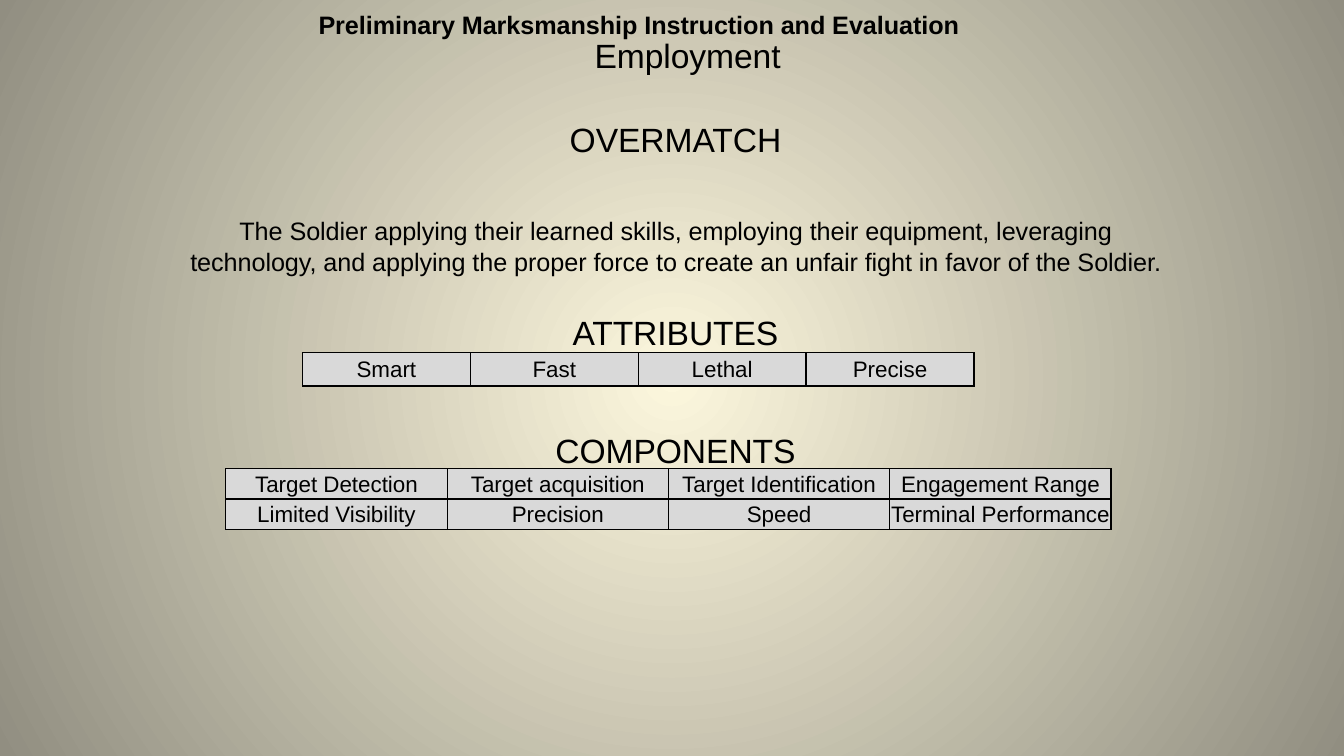
import pptx
import pptx.util
import pptx.dml.color
import pptx.enum.text
import pptx.oxml
import pptx.oxml.ns
from pptx.util import Inches

COLORS = {"text": "000000", "border": "000000", "cell": "D9D9D9",
          "glow": "FCF7DD", "edge": "918E81"}
qn = pptx.oxml.ns.qn
NS = pptx.oxml.ns.nsdecls("a")


def rgb(name):
    return pptx.dml.color.RGBColor.from_string(COLORS[name])


class SlideBuilder:
    font = "Arial"

    def __init__(self, slide):
        self.slide = slide

    def background(self):
        fill = self.slide.background.fill
        fill.gradient()
        for stop, position, color in zip(fill.gradient_stops, (0, 1), ("glow", "edge")):
            stop.position = position
            stop.color.rgb = rgb(color)
        gradient = next(self.slide.element.iter(qn("a:gradFill")))
        radial = pptx.oxml.parse_xml(
            f'<a:path {NS} path="circle">'
            '<a:fillToRect l="50000" t="50000" r="50000" b="50000"/></a:path>')
        gradient.replace(gradient.find(qn("a:lin")), radial)

    def style(self, paragraph, size, bold=False):
        paragraph.alignment = pptx.enum.text.PP_ALIGN.CENTER
        paragraph.font.name = self.font
        paragraph.font.size = pptx.util.Pt(size)
        paragraph.font.bold = bold
        paragraph.font.color.rgb = rgb("text")

    def text(self, words, left, top, width, height, size=24, bold=False,
             indent=0.06, inset=0.01, line_spacing=None):
        box = self.slide.shapes.add_textbox(
            Inches(left), Inches(top), Inches(width), Inches(height))
        frame = box.text_frame
        frame.word_wrap = True
        frame.auto_size = pptx.enum.text.MSO_AUTO_SIZE.SHAPE_TO_FIT_TEXT
        frame.margin_left = frame.margin_right = frame.margin_bottom = 0
        frame.margin_top = Inches(inset)
        paragraph = frame.paragraphs[0]
        paragraph.text = words
        paragraph.line_spacing = line_spacing
        self.style(paragraph, size, bold)
        for properties in box.element.iter(qn("a:pPr")):
            properties.set("marL", str(Inches(indent)))
            properties.set("indent", "0")
            properties.find(qn("a:defRPr")).set("spc", "-5")

    def table(self, rows, left, top, width, row_height):
        frame = self.slide.shapes.add_table(
            len(rows), len(rows[0]), Inches(left), Inches(top),
            Inches(width), Inches(row_height * len(rows)))
        table = frame.table
        table.first_row = table.horz_banding = False
        for cell, words in zip(table.iter_cells(), sum(rows, [])):
            self.cell(cell, words)

    def cell(self, cell, words):
        cell.margin_left = cell.margin_right = cell.margin_top = Inches(0.01)
        cell.margin_bottom = 0
        cell.vertical_anchor = pptx.enum.text.MSO_ANCHOR.MIDDLE
        cell.fill.solid()
        cell.fill.fore_color.rgb = rgb("cell")
        paragraph = cell.text_frame.paragraphs[0]
        paragraph.text = words
        self.style(paragraph, 16)
        properties = cell._tc.get_or_add_tcPr()
        for order, side in enumerate(("lnL", "lnR", "lnT", "lnB")):
            properties.insert(order, pptx.oxml.parse_xml(
                f'<a:{side} {NS} w="12700"><a:solidFill>'
                f'<a:srgbClr val="{COLORS["border"]}"/></a:solidFill></a:{side}>'))


def main():
    deck = pptx.Presentation()
    deck.slide_width, deck.slide_height = Inches(13.33), Inches(7.5)
    page = SlideBuilder(deck.slides.add_slide(deck.slide_layouts[6]))
    page.background()
    page.text("Preliminary Marksmanship Instruction and Evaluation",
              2.06, 0.08, 8.54, 0.32, size=18, bold=True,
              indent=0.01, inset=0, line_spacing=1.04)
    page.text("Employment", 1.65, 0.34, 10, 0.42, indent=0.34)
    for heading, top in (("OVERMATCH", 1.17), ("ATTRIBUTES", 3.08), ("COMPONENTS", 4.25)):
        page.text(heading, 1.67, top, 10, 0.42)
    page.text("The Soldier applying their learned skills, employing their equipment, "
              "leveraging technology, and applying the proper force to create an "
              "unfair fight in favor of the Soldier.", 1.67, 2.13, 10, 0.62, size=18)
    attributes = [["Smart", "Fast", "Lethal", "Precise"]]
    components = [
        ["Target Detection", "Target acquisition", "Target Identification", "Engagement Range"],
        ["Limited Visibility", "Precision", "Speed", "Terminal Performance"],
    ]
    page.table(attributes, 3, 3.5, 6.66, 0.33)
    page.table(components, 2.24, 4.65, 8.78, 0.3)
    deck.save("out.pptx")


if __name__ == "__main__":
    main()
